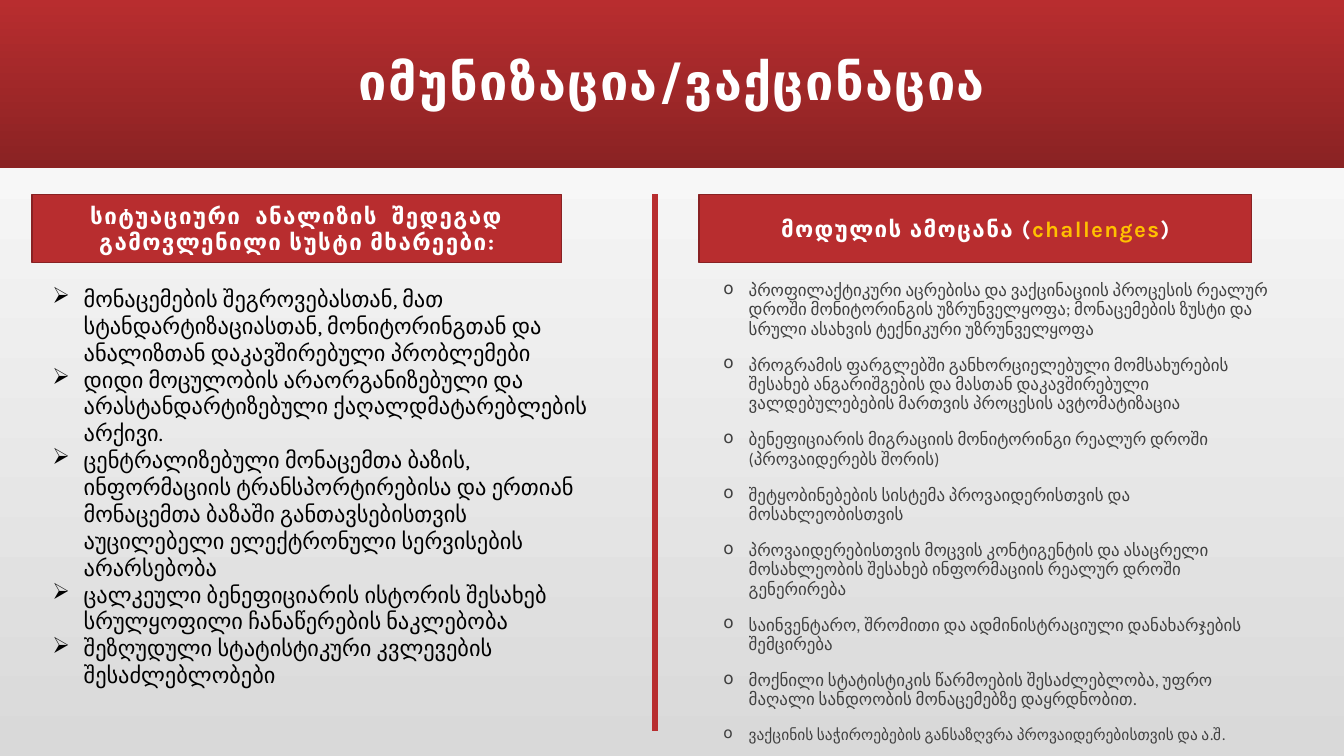
from dataclasses import dataclass

from lxml import etree
from pptx import Presentation
from pptx.dml.color import RGBColor
from pptx.enum.shapes import MSO_CONNECTOR, MSO_SHAPE
from pptx.enum.text import MSO_ANCHOR, MSO_AUTO_SIZE, PP_ALIGN
from pptx.oxml.ns import qn
from pptx.util import Cm, Pt

RECTANGLE = MSO_SHAPE.RECTANGLE
STRAIGHT = MSO_CONNECTOR.STRAIGHT
MIDDLE, TOP = MSO_ANCHOR.MIDDLE, MSO_ANCHOR.TOP
NO_FIT, GROW = MSO_AUTO_SIZE.NONE, MSO_AUTO_SIZE.SHAPE_TO_FIT_TEXT
CENTER, LEFT = PP_ALIGN.CENTER, PP_ALIGN.LEFT


@dataclass(frozen=True)
class Theme:
    red: str = "B82D2F"
    dark_red: str = "8A2223"
    outline: str = "882123"
    white: str = "FFFFFF"
    grey: str = "D9D9D9"
    gold: str = "FFC000"
    black: str = "000000"
    text_grey: str = "404040"
    heading_font: str = "Karla"
    body_font: str = "Calibri"
    title_size: float = 36
    heading_size: float = 16
    task_size: float = 12.1
    last_task_size: float = 11


THEME = Theme()


def add_run(paragraph, text, size, color, name=THEME.heading_font, bold=False, spacing=0):
    run = paragraph.add_run()
    run.text = text
    for attribute, value in {"size": Pt(size), "name": name, "bold": bold}.items():
        setattr(run.font, attribute, value)
    run.font.color.rgb = RGBColor.from_string(color)
    if spacing:
        run._r.get_or_add_rPr().set("spc", str(spacing * 100))


def set_gradient(fill, angle, colors):
    fill.gradient()
    fill.gradient_angle = angle
    for position, (stop, color) in enumerate(zip(fill.gradient_stops, colors)):
        stop.position = position
        stop.color.rgb = RGBColor.from_string(color)


presentation = Presentation()
presentation.slide_width, presentation.slide_height = Cm(33.87), Cm(19.05)
slide = presentation.slides.add_slide(presentation.slide_layouts[5])
shapes = slide.shapes
set_gradient(slide.background.fill, 90, (THEME.grey, THEME.white))

# Title band, placed behind the title
band = shapes.add_shape(RECTANGLE, 0, 0, presentation.slide_width, Cm(4.23))
band.shadow.inherit = False
band.line.fill.background()
set_gradient(band.fill, 270, (THEME.red, THEME.dark_red))
shapes.title._element.addprevious(band._element)

# Title
title = shapes.title
for attribute, value in {"left": Cm(2.97), "top": 0, "width": Cm(27.94), "height": Cm(4.23)}.items():
    setattr(title, attribute, value)
for attribute, value in {"vertical_anchor": MIDDLE, "auto_size": NO_FIT, "word_wrap": True}.items():
    setattr(title.text_frame, attribute, value)
paragraph = title.text_frame.paragraphs[0]
paragraph.alignment, paragraph.line_spacing = CENTER, 0.9
add_run(paragraph, "იმუნიზაცია/ვაქცინაცია", THEME.title_size, THEME.white, bold=True, spacing=1)

# Column headings
headings = [
    (0.81, 13.34, [("სიტუაციური  ანალიზის  შედეგად გამოვლენილი სუსტი მხარეები:", THEME.white)]),
    (17.62, 13.92, [("მოდულის ამოცანა (", THEME.white), ("challenges", THEME.gold), (")", THEME.white)]),
]
for left, width, parts in headings:
    heading = shapes.add_shape(RECTANGLE, Cm(left), Cm(4.9), Cm(width), Cm(1.72))
    heading.shadow.inherit = False
    heading.fill.solid()
    heading.fill.fore_color.rgb = RGBColor.from_string(THEME.red)
    heading.line.color.rgb = RGBColor.from_string(THEME.outline)
    heading.line.width = Pt(1)
    heading.text_frame.vertical_anchor = MIDDLE
    heading.text_frame.word_wrap = True
    paragraph = heading.text_frame.paragraphs[0]
    paragraph.alignment = CENTER
    for text, color in parts:
        add_run(paragraph, text, THEME.heading_size, color, bold=True, spacing=1)

# Divider between the columns
divider = shapes.add_connector(STRAIGHT, Cm(16.51), Cm(4.9), Cm(16.51), Cm(18.42))
divider.line.color.rgb = RGBColor.from_string(THEME.red)
divider.line.width = Pt(4)
etree.SubElement(divider._element.spPr, qn("a:effectLst"))

# Bulleted lists
weaknesses = [
    "მონაცემების შეგროვებასთან, მათ სტანდარტიზაციასთან, მონიტორინგთან და ანალიზთან დაკავშირებული პრობლემები",
    "დიდი მოცულობის არაორგანიზებული და არასტანდარტიზებული ქაღალდმატარებლების არქივი.",
    "ცენტრალიზებული მონაცემთა ბაზის, ინფორმაციის ტრანსპორტირებისა და ერთიან მონაცემთა ბაზაში "
    "განთავსებისთვის აუცილებელი ელექტრონული სერვისების არარსებობა",
    "ცალკეული ბენეფიციარის ისტორის შესახებ სრულყოფილი ჩანაწერების ნაკლებობა",
    "შეზღუდული სტატისტიკური კვლევების შესაძლებლობები",
]
tasks = [
    "პროფილაქტიკური აცრებისა და ვაქცინაციის პროცესის რეალურ დროში მონიტორინგის უზრუნველყოფა; "
    "მონაცემების ზუსტი და სრული ასახვის ტექნიკური უზრუნველყოფა",
    "პროგრამის ფარგლებში განხორციელებული მომსახურების შესახებ ანგარიშგების და მასთან დაკავშირებული "
    "ვალდებულებების მართვის პროცესის ავტომატიზაცია",
    "ბენეფიციარის მიგრაციის მონიტორინგი რეალურ დროში (პროვაიდერებს შორის)",
    "შეტყობინებების სისტემა პროვაიდერისთვის და მოსახლეობისთვის",
    "პროვაიდერებისთვის მოცვის კონტიგენტის და ასაცრელი მოსახლეობის შესახებ ინფორმაციის რეალურ დროში გენერირება",
    "საინვენტარო, შრომითი და ადმინისტრაციული დანახარჯების შემცირება",
    "მოქნილი სტატისტიკის წარმოების შესაძლებლობა, უფრო მაღალი სანდოობის მონაცემებზე დაყრდნობით.",
    "ვაქცინის საჭიროებების განსაზღვრა პროვაიდერებისთვის და ა.შ.",
]
weakness_style = {"size": THEME.heading_size, "color": THEME.black, "name": THEME.heading_font}
task_style = {"size": THEME.task_size, "color": THEME.text_grey, "name": THEME.body_font}
last_task_style = {**task_style, "size": THEME.last_task_size}
lists = [
    ((1.07, 7.06, 14, 10.52), GROW, "➢", 0.79, {"alignment": LEFT},
     [(text, weakness_style) for text in weaknesses]),
    ((17.98, 6.96, 14.4, 11.46), NO_FIT, "o", 0.64,
     {"alignment": LEFT, "line_spacing": 0.95, "space_before": Pt(12)},
     [(text, task_style) for text in tasks[:-1]] + [(tasks[-1], last_task_style)]),
]
for box, auto_size, bullet, indent, paragraph_format, items in lists:
    text_frame = shapes.add_textbox(*map(Cm, box)).text_frame
    for attribute, value in {"word_wrap": True, "auto_size": auto_size, "vertical_anchor": TOP}.items():
        setattr(text_frame, attribute, value)
    for index, (text, style) in enumerate(items):
        paragraph = text_frame.add_paragraph() if index else text_frame.paragraphs[0]
        for attribute, value in paragraph_format.items():
            setattr(paragraph, attribute, value)
        properties = paragraph._p.get_or_add_pPr()
        properties.set("marL", str(Cm(indent)))
        properties.set("indent", str(-Cm(indent)))
        etree.SubElement(properties, qn("a:buChar"), char=bullet)
        add_run(paragraph, text, **style)

presentation.save("out.pptx")
